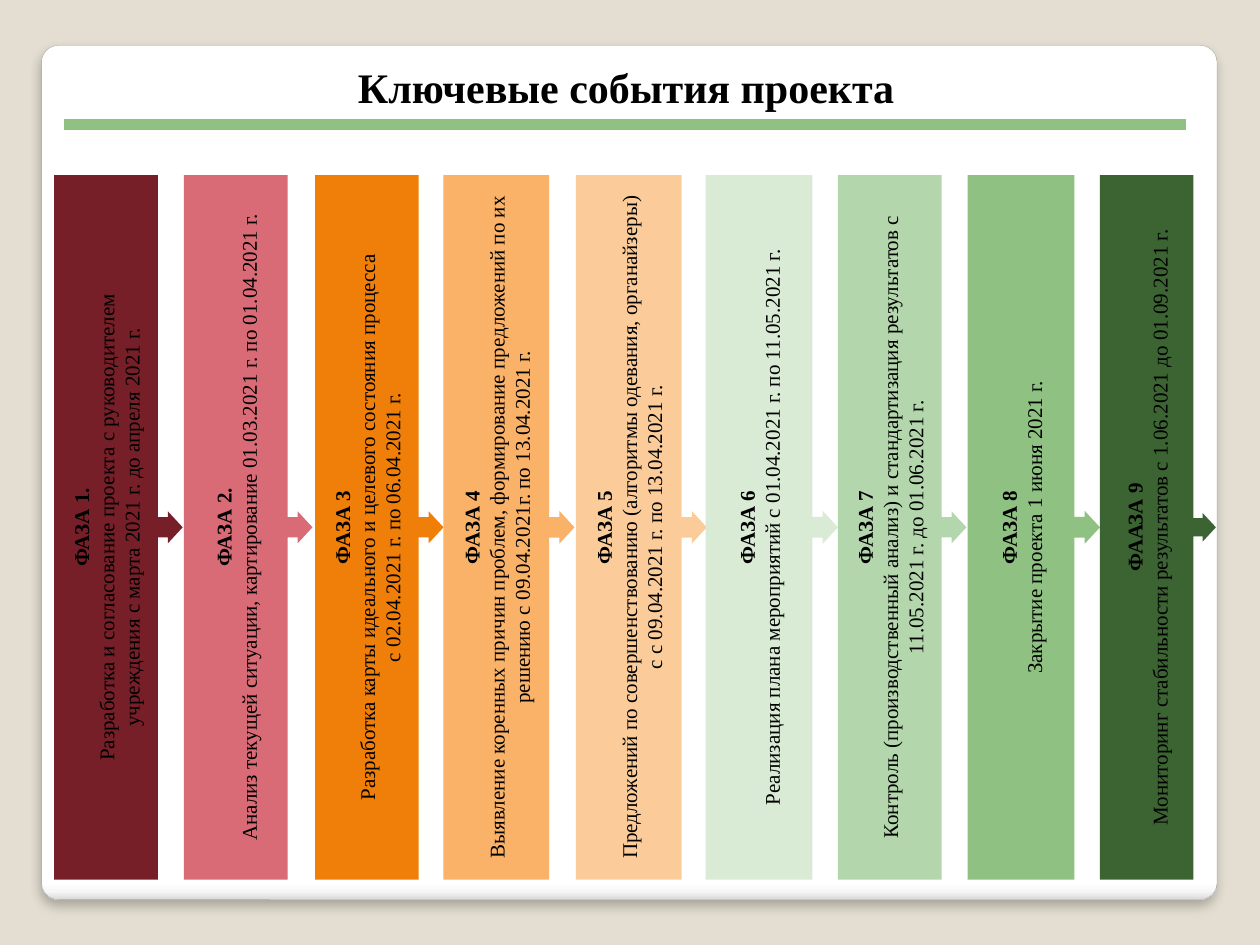
"""Build the slide with the nine key phases of the project."""
from lxml import etree
from pptx import Presentation
from pptx.dml.color import RGBColor
from pptx.enum.shapes import MSO_CONNECTOR, MSO_SHAPE
from pptx.enum.text import MSO_ANCHOR, MSO_AUTO_SIZE, PP_ALIGN
from pptx.oxml import parse_xml
from pptx.oxml.ns import nsdecls, qn
from pptx.util import Inches, Pt

FONT = "Times New Roman"
BLACK = RGBColor(0x00, 0x00, 0x00)
BEIGE = RGBColor(0xE3, 0xDE, 0xD1)
GREY = RGBColor(0xA4, 0xA4, 0xA4)
MAROON = RGBColor(0x77, 0x1F, 0x28)
ROSE = RGBColor(0xD9, 0x6B, 0x77)
ORANGE = RGBColor(0xF0, 0x7F, 0x09)
APRICOT = RGBColor(0xF9, 0xB2, 0x68)
PEACH = RGBColor(0xFB, 0xCC, 0x9A)
MINT = RGBColor(0xD9, 0xEA, 0xD5)
SAGE = RGBColor(0xB3, 0xD6, 0xAC)
GREEN = RGBColor(0x8E, 0xC1, 0x82)
FOREST = RGBColor(0x3B, 0x64, 0x32)

PANEL_STOPS = [(0, "FFFFFF"), (98, "FFFFFF"), (99, "F7F7F7"), (100, "DADADA")]
PHASES = [
    (0.43, 1.02, MAROON, ["ФАЗА 1.", "Разработка и согласование проекта с руководителем",
                          "учреждения с марта 2021 г. до апреля 2021 г."]),
    (1.46, 1.02, ROSE, ["ФАЗА 2.", "Анализ текущей ситуации, картирование 01.03.2021 г. по 01.04.2021 г."]),
    (2.5, 1.02, ORANGE, ["ФАЗА 3", "Разработка карты идеального и целевого состояния процесса",
                         "с 02.04.2021 г. по 06.04.2021 г."]),
    (3.52, 1.04, APRICOT, ["ФАЗА 4", "Выявление коренных причин проблем, формирование предложений "
                           "по их решению с 09.04.2021г. по 13.04.2021 г."]),
    (4.57, 1.04, PEACH, ["ФАЗА 5", "Предложений по совершенствованию (алгоритмы одевания, органайзеры)",
                         "с с 09.04.2021 г. по 13.04.2021 г."]),
    (5.6, 1.05, MINT, ["ФАЗА 6", "Реализация плана мероприятий с 01.04.2021 г. по 11.05.2021 г."]),
    (6.65, 1.02, SAGE, ["ФАЗА 7", "Контроль (производственный анализ) и стандартизация результатов "
                        "с 11.05.2021 г. до 01.06.2021 г."]),
    (7.68, 1.05, GREEN, ["ФАЗА 8", "Закрытие проекта 1 июня 2021 г."]),
    (8.73, 0.92, FOREST, ["ФААЗА 9", "Мониторинг стабильности результатов с 1.06.2021 до 01.09.2021 г."]),
]


def style(p, size, bold):
    p.alignment = PP_ALIGN.CENTER
    for r in p.runs:
        r.font.name = FONT
        r.font.size = Pt(size)
        r.font.bold = bold
        r.font.color.rgb = BLACK


prs = Presentation()
prs.slide_width, prs.slide_height = Inches(10), Inches(7.5)
s = prs.slides.add_slide(prs.slide_layouts[6])
s.background.fill.solid()
s.background.fill.fore_color.rgb = BEIGE

panel = s.shapes.add_shape(MSO_SHAPE.ROUNDED_RECTANGLE, Inches(0.33), Inches(0.36), Inches(9.33), Inches(6.78))
panel.adjustments[0] = 0.02
panel.fill.gradient()
panel.fill.gradient_angle = 270
gs_list = panel._element.spPr.find(".//" + qn("a:gsLst"))
for gs in list(gs_list):
    gs_list.remove(gs)
for pos, color in PANEL_STOPS:
    gs = etree.SubElement(gs_list, qn("a:gs"), pos=str(pos * 1000))
    etree.SubElement(gs, qn("a:srgbClr"), val=color)
panel.line.color.rgb = GREY
panel.line.width = Pt(0.16)
panel._element.spPr.append(parse_xml(
    f'<a:effectLst {nsdecls("a")}><a:outerShdw blurRad="{Pt(6)}" dist="{Pt(4)}" dir="5400000" '
    'algn="tl" rotWithShape="0"><a:srgbClr val="000000"><a:alpha val="25000"/></a:srgbClr>'
    '</a:outerShdw></a:effectLst>'))

title = s.shapes.add_textbox(Inches(2.72), Inches(0.44), Inches(4.5), Inches(0.5))
tf = title.text_frame
tf.word_wrap = False
tf.auto_size = MSO_AUTO_SIZE.SHAPE_TO_FIT_TEXT
tf.text = "Ключевые события проекта"
style(tf.paragraphs[0], 24, True)

for left, width, color, lines in PHASES:
    sp = s.shapes.add_shape(MSO_SHAPE.RIGHT_ARROW_CALLOUT, Inches(left), Inches(1.39), Inches(width), Inches(5.59))
    for i, value in enumerate((0.157, 0.124, 0.115, 0.807)):
        sp.adjustments[i] = value
    sp.shadow.inherit = False
    sp.fill.solid()
    sp.fill.fore_color.rgb = color
    sp.line.fill.background()
    tf = sp.text_frame
    tf.word_wrap = True
    tf.vertical_anchor = MSO_ANCHOR.MIDDLE
    tf._txBody.bodyPr.set("vert", "vert270")
    tf.text = "\n".join(lines)
    for i, p in enumerate(tf.paragraphs):
        style(p, 12, i == 0)

rule = s.shapes.add_connector(MSO_CONNECTOR.STRAIGHT, Inches(0.51), Inches(0.99), Inches(9.41), Inches(0.99))
rule.line.color.rgb = GREEN
rule.line.width = Pt(6)
etree.SubElement(rule._element.spPr, qn("a:effectLst"))

prs.save("out.pptx")
